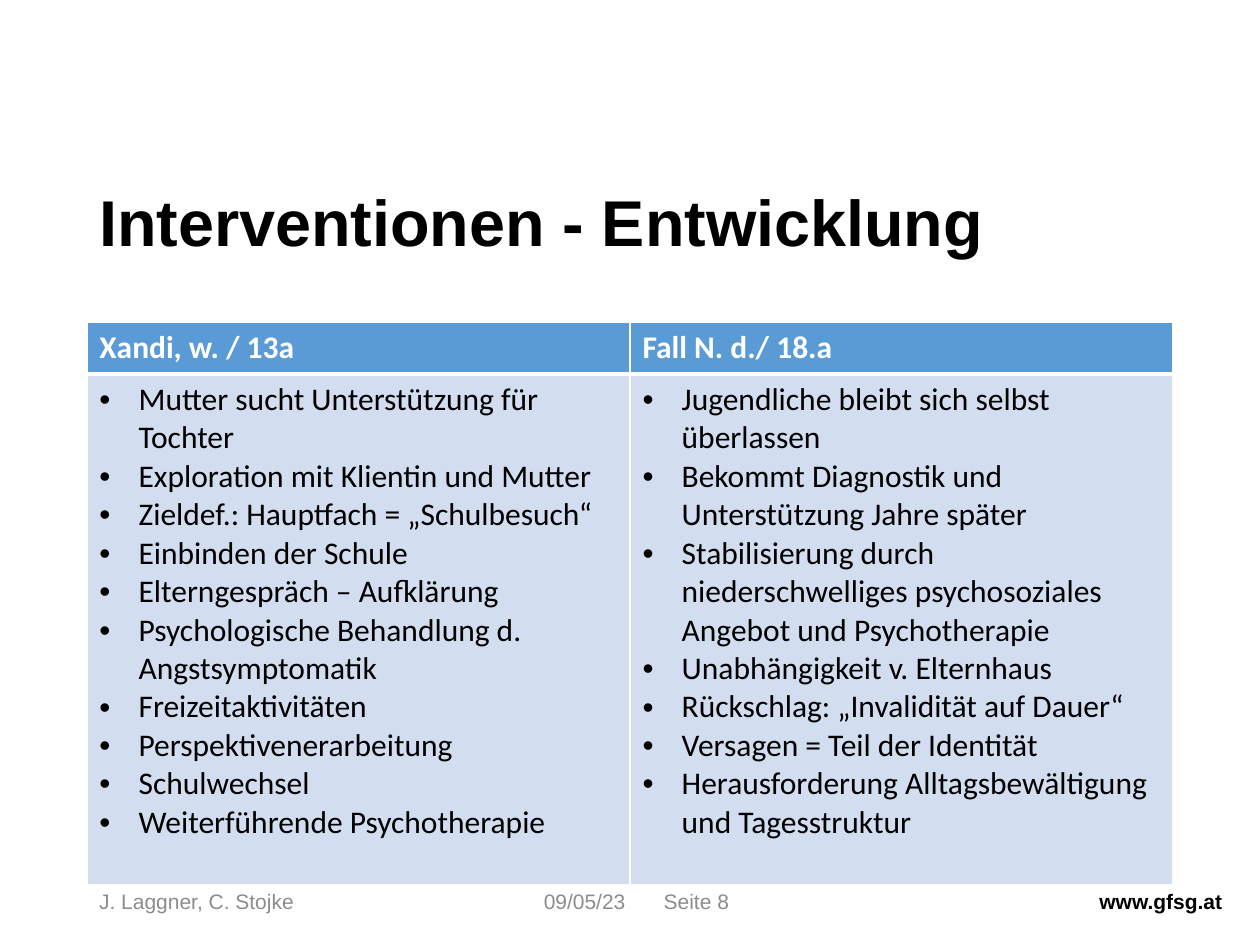
from lxml.etree import SubElement
from pptx import Presentation
from pptx.dml.color import RGBColor
from pptx.enum.text import MSO_ANCHOR as Anchor, PP_ALIGN as Align
from pptx.oxml.ns import qn
from pptx.util import Cm, Pt

COLORS = {
    "black": "000000",
    "white": "FFFFFF",
    "grey": "8C8C8C",
    "header": "5B9BD5",
    "body": "D2DEEF",
}
LEFT, WIDTH = Cm(1.75), Cm(21.9)
INDENT = Cm(0.79)
HEADER_HEIGHT, BODY_HEIGHT = Cm(1.04), Cm(10.29)


def write(frame, lines, size=18, font="Calibri", color="black", bold=False,
          align=Align.LEFT, bullet=False):
    """Fill a text frame with one paragraph per line."""
    for index, line in enumerate(lines):
        para = frame.paragraphs[0] if index == 0 else frame.add_paragraph()
        para.alignment = align
        if bullet:
            props = para._p.get_or_add_pPr()
            props.set("marL", str(INDENT))
            props.set("indent", str(-INDENT))
            SubElement(props, qn("a:buFont"), typeface="Arial")
            SubElement(props, qn("a:buChar"), char="•")
        span = para.add_run()
        span.text = line
        span.font.name = font
        span.font.size = Pt(size)
        span.font.bold = bold
        span.font.color.rgb = RGBColor.from_string(COLORS[color])


def style_cell(cell, fill, bottom):
    """Give a cell white borders and a solid fill."""
    props = cell._tc.get_or_add_tcPr()
    for side, points in (("L", 1), ("R", 1), ("T", 1), ("B", bottom)):
        line = SubElement(props, qn(f"a:ln{side}"), w=str(Pt(points)))
        solid = SubElement(line, qn("a:solidFill"))
        SubElement(solid, qn("a:srgbClr"), val=COLORS["white"])
    cell.fill.solid()
    cell.fill.fore_color.rgb = RGBColor.from_string(COLORS[fill])


deck = Presentation()
deck.slide_width, deck.slide_height = Cm(25.4), Cm(19.05)
page = deck.slides.add_slide(deck.slide_layouts[5])

# Title
title = page.shapes.title
title.left, title.top, title.width, title.height = LEFT, Cm(3.71), WIDTH, Cm(2.36)
title.text_frame.vertical_anchor = Anchor.TOP
write(title.text_frame, ["Interventionen - Entwicklung"], size=37, font="Arial", bold=True)
title.text_frame.paragraphs[0].line_spacing = 0.9

# Comparison of the two cases
cases = {
    "Xandi, w. / 13a": [
        "Mutter sucht Unterstützung für Tochter",
        "Exploration mit Klientin und Mutter",
        "Zieldef.: Hauptfach = „Schulbesuch“",
        "Einbinden der Schule",
        "Elterngespräch – Aufklärung",
        "Psychologische Behandlung d. Angstsymptomatik",
        "Freizeitaktivitäten",
        "Perspektivenerarbeitung",
        "Schulwechsel",
        "Weiterführende Psychotherapie",
    ],
    "Fall N. d./ 18.a": [
        "Jugendliche bleibt sich selbst überlassen",
        "Bekommt Diagnostik und Unterstützung Jahre später",
        "Stabilisierung durch niederschwelliges psychosoziales Angebot und Psychotherapie",
        "Unabhängigkeit v. Elternhaus",
        "Rückschlag: „Invalidität auf Dauer“",
        "Versagen = Teil der Identität",
        "Herausforderung Alltagsbewältigung und Tagesstruktur",
    ],
}
table = page.shapes.add_table(2, len(cases), LEFT, Cm(6.5), WIDTH,
                              HEADER_HEIGHT + BODY_HEIGHT).table
table.rows[0].height, table.rows[1].height = HEADER_HEIGHT, BODY_HEIGHT
for column, (heading, steps) in enumerate(cases.items()):
    header, body = table.cell(0, column), table.cell(1, column)
    style_cell(header, "header", bottom=3)
    write(header.text_frame, [heading], color="white", bold=True)
    style_cell(body, "body", bottom=1)
    write(body.text_frame, steps, bullet=True)

# Footer
footers = [
    ("J. Laggner, C. Stojke", LEFT, Cm(6.58), Align.LEFT, "grey", False),
    ("09/05/23", Cm(8.59), Cm(4.27), Align.RIGHT, "grey", False),
    ("Seite 8", Cm(13.13), Cm(3.45), Align.LEFT, "grey", False),
    ("www.gfsg.at", Cm(19.79), Cm(5.1), Align.RIGHT, "black", True),
]
for text, left, width, align, color, bold in footers:
    frame = page.shapes.add_textbox(left, Cm(17.65), width, Cm(1.02)).text_frame
    frame.word_wrap = True
    frame.vertical_anchor = Anchor.MIDDLE
    write(frame, [text], size=12, font="Arial", color=color, bold=bold, align=align)

deck.save("out.pptx")
